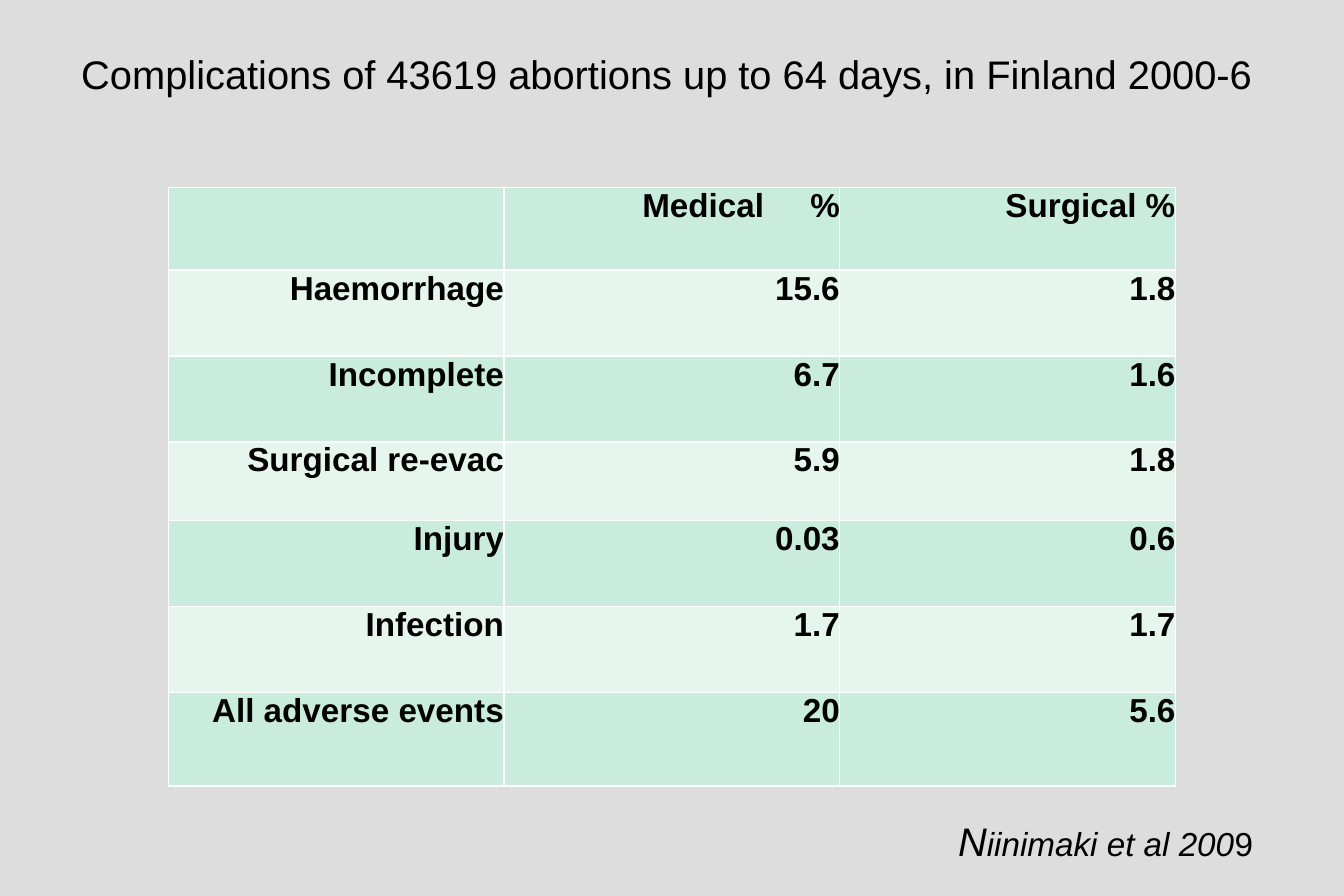
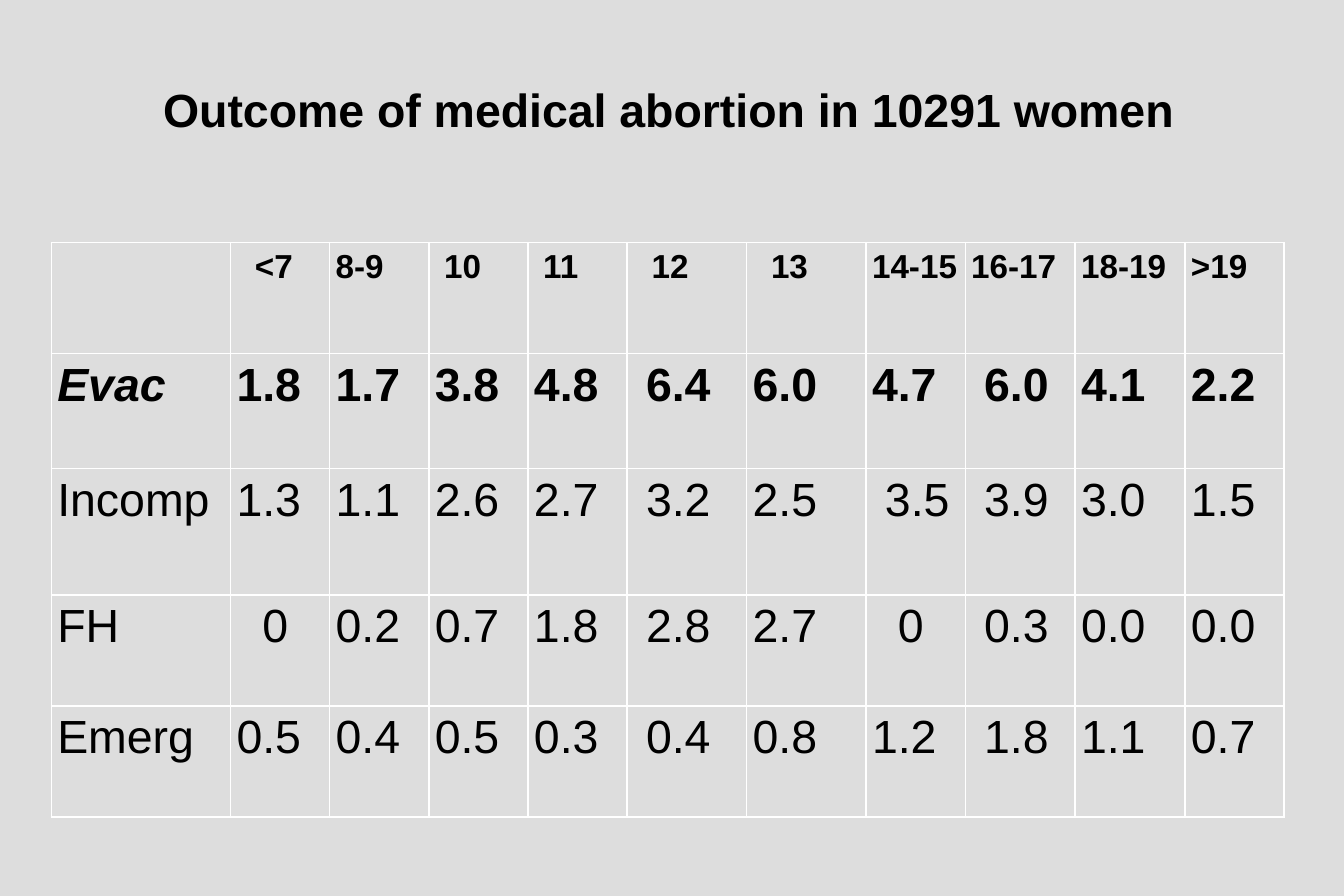
from lxml import etree
from pptx import Presentation
from pptx.dml.color import RGBColor
from pptx.enum.text import MSO_ANCHOR, PP_ALIGN
from pptx.oxml.ns import qn
from pptx.util import Inches, Pt

LEFT, CENTER, RIGHT = PP_ALIGN.LEFT, PP_ALIGN.CENTER, PP_ALIGN.RIGHT
TOP, MIDDLE = MSO_ANCHOR.TOP, MSO_ANCHOR.MIDDLE

BACKGROUND = RGBColor(0xDD, 0xDD, 0xDD)
INK = RGBColor(0, 0, 0)
RULE = RGBColor(0xFF, 0xFF, 0xFF)
MINT = RGBColor(0xCA, 0xEC, 0xDD)
PALE_MINT = RGBColor(0xE6, 0xF6, 0xEF)
FONT = "Arial"
INSET = 0.05
SPACE_EM = 0.278  # width of a space, in ems

COMPLICATIONS = [
    ("", "Medical %", "Surgical %"),
    ("Haemorrhage", "15.6", "1.8"),
    ("Incomplete", "6.7", "1.6"),
    ("Surgical re-evac", "5.9", "1.8"),
    ("Injury", "0.03", "0.6"),
    ("Infection", "1.7", "1.7"),
    ("All adverse events", "20", "5.6"),
]
COMPLICATION_ROWS = [0.69, 0.72, 0.72, 0.66, 0.72, 0.72, 0.78]

OUTCOMES = [
    ("", "<7", "8-9", "10", "11", "12", "13", "14-15", "16-17", "18-19", ">19"),
    ("Evac", "1.8", "1.7", "3.8", "4.8", "6.4", "6.0", "4.7", "6.0", "4.1", "2.2"),
    ("Incomp", "1.3", "1.1", "2.6", "2.7", "3.2", "2.5", "3.5", "3.9", "3.0", "1.5"),
    ("FH", "0", "0.2", "0.7", "1.8", "2.8", "2.7", "0", "0.3", "0.0", "0.0"),
    ("Emerg", "0.5", "0.4", "0.5", "0.3", "0.4", "0.8", "1.2", "1.8", "1.1", "0.7"),
]
OUTCOME_COLUMNS = [1.5, 0.83, 0.83, 0.83, 0.83, 1, 1, 0.83, 0.92, 0.92, 0.83]
OUTCOME_ROWS = [0.93, 0.96, 1.06, 0.93, 0.93]
# Indents in space widths, by (row, column)
OUTCOME_INDENTS = {(0, 1): 2, (0, 3): 1, (0, 4): 1, (0, 5): 2, (0, 6): 2,
                   (2, 7): 1, (3, 1): 2, (3, 7): 2}
OUTCOME_INDENTS.update({(row, col): 1 for row in range(1, 5) for col in (5, 8)})


def new_slide(prs):
    slide = prs.slides.add_slide(prs.slide_layouts[6])
    slide.background.fill.solid()
    slide.background.fill.fore_color.rgb = BACKGROUND
    return slide


def style(font, size, bold=False, italic=False):
    font.name, font.size, font.bold, font.italic = FONT, Pt(size), bold, italic
    font.color.rgb = INK


def set_insets(target, inset):
    target.margin_left = target.margin_right = Inches(inset)
    target.margin_top = target.margin_bottom = Inches(inset)


def add_text(slide, box, runs, size, bold=False, italic=False, align=LEFT, anchor=TOP):
    frame = slide.shapes.add_textbox(*map(Inches, box)).text_frame
    frame.word_wrap = True
    frame.vertical_anchor = anchor
    set_insets(frame, INSET)
    paragraph = frame.paragraphs[0]
    paragraph.alignment = align
    style(paragraph.font, size, bold, italic)
    for text in runs:
        paragraph.add_run().text = text
    return frame


def add_borders(cell):
    properties = cell._tc.get_or_add_tcPr()
    for index, side in enumerate(("a:lnL", "a:lnR", "a:lnT", "a:lnB")):
        line = etree.Element(qn(side), w=str(Pt(1)))
        fill = etree.SubElement(line, qn("a:solidFill"))
        etree.SubElement(fill, qn("a:srgbClr"), val=str(RULE))
        properties.insert(index, line)


def add_grid(slide, origin, columns, heights, rows, fills, inset, write):
    """Lay out a ruled table; write(paragraph, text, row, col) sets each text."""
    box = (*origin, sum(columns), sum(heights))
    table = slide.shapes.add_table(len(rows), len(columns), *map(Inches, box)).table
    table.first_row = table.horz_banding = False
    for column, width in zip(table.columns, columns):
        column.width = Inches(width)
    for r, texts in enumerate(rows):
        table.rows[r].height = Inches(heights[r])
        for c, text in enumerate(texts):
            cell = table.cell(r, c)
            set_insets(cell, inset)
            cell.fill.solid()
            cell.fill.fore_color.rgb = fills[r % len(fills)]
            add_borders(cell)
            if text:
                write(cell.text_frame.paragraphs[0], text, r, c)
    return table


def write_complication(paragraph, text, row, col):
    paragraph.alignment = RIGHT
    style(paragraph.font, 20, bold=True)
    if text != "Medical %":
        paragraph.add_run().text = text
        return
    # The gap before the sign is one widely spaced character
    for part in ("Medical", " ", "%"):
        run = paragraph.add_run()
        run.text = part
        if part == " ":
            run.font._element.set("spc", "2220")


def write_outcome(paragraph, text, row, col):
    size = 20 if row == 0 else 28
    paragraph.space_before = Pt(4 if row == 0 else 6)
    style(paragraph.font, size, bold=row < 2, italic=(row, col) == (1, 0))
    paragraph.add_run().text = text
    spaces = OUTCOME_INDENTS.get((row, col), 0)
    if spaces:
        properties = paragraph._p.get_or_add_pPr()
        properties.set("marL", str(Pt(spaces * SPACE_EM * size)))
        properties.set("indent", "0")


def complications_slide(prs):
    slide = new_slide(prs)
    add_text(slide, (0.63, 0.37, 10, 0.5),
             ["Complications of 43619 abortions up to 64 days, in Finland 2000-6"], 24)
    # Citation: large initial, upright last digit
    citation = add_text(slide, (7.97, 6.79, 2.69, 0.5),
                        ["N", "iinimaki et al 200", "9"], 20, italic=True)
    initial, _, last_digit = citation.paragraphs[0].runs
    initial.font.size = Pt(24)
    last_digit.font.italic = False
    add_grid(slide, (1.41, 1.57), [2.81] * 3, COMPLICATION_ROWS, COMPLICATIONS,
             [MINT, PALE_MINT], 0, write_complication)


def outcomes_slide(prs):
    slide = new_slide(prs)
    title = add_text(slide, (0.84, 0.36, 9.51, 1.55),
                     ["Outcome of medical abortion in 10291 women"], 28,
                     bold=True, align=CENTER, anchor=MIDDLE)
    title.margin_bottom = Inches(0.5)  # lifts the title above the middle
    add_grid(slide, (0.43, 2.03), OUTCOME_COLUMNS, OUTCOME_ROWS, OUTCOMES,
             [BACKGROUND], INSET, write_outcome)


def main():
    prs = Presentation()
    prs.slide_width, prs.slide_height = Inches(11.25), Inches(7.5)
    complications_slide(prs)
    outcomes_slide(prs)
    prs.save("out.pptx")


if __name__ == "__main__":
    main()
